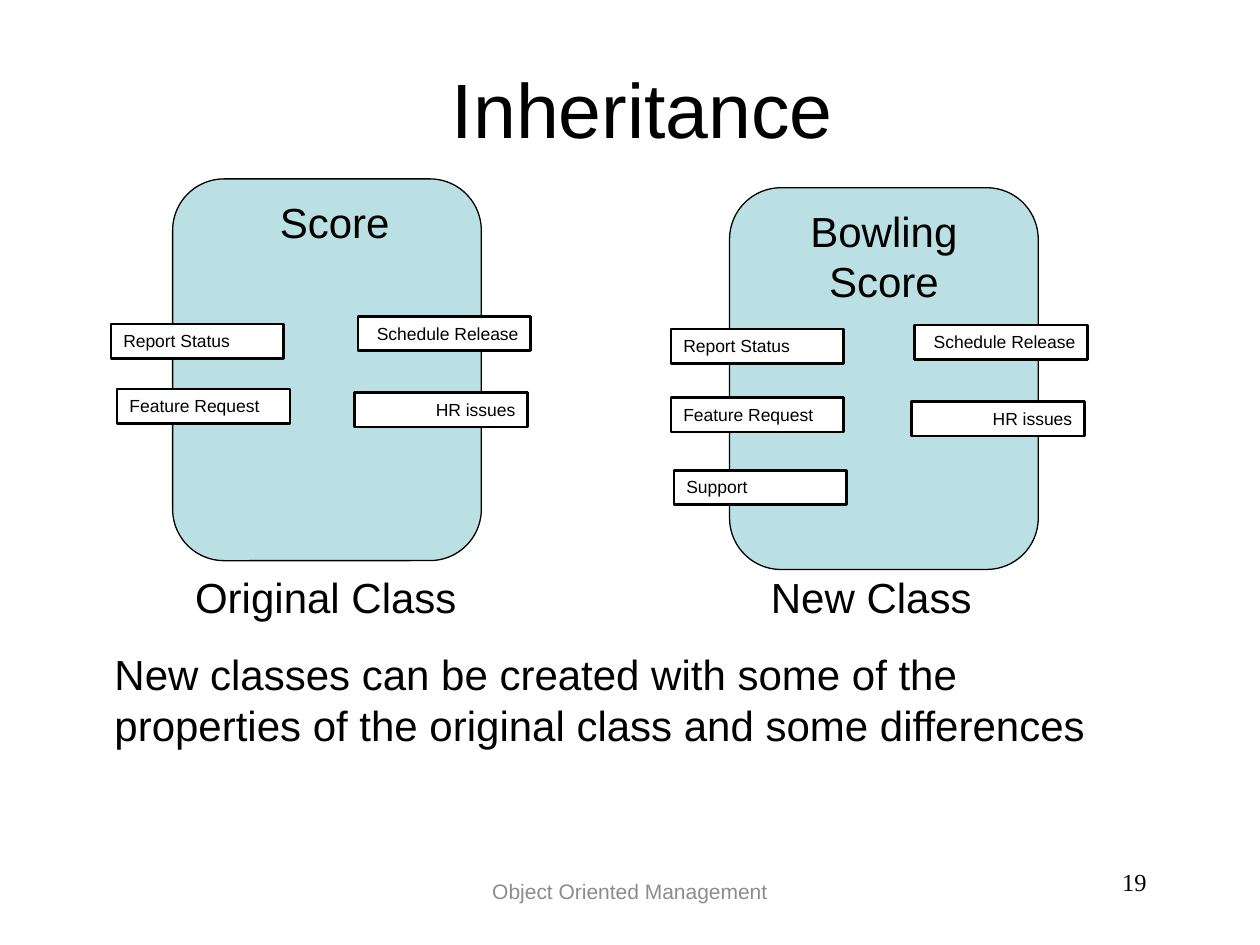
from dataclasses import dataclass

from lxml.etree import SubElement
from pptx import Presentation
from pptx.dml.color import RGBColor
from pptx.enum.shapes import MSO_SHAPE
from pptx.enum.text import MSO_ANCHOR, PP_ALIGN
from pptx.oxml.ns import qn
from pptx.util import Inches, Pt

CELL = Inches(0.1)
COLUMNS, ROWS = 100, 75


@dataclass(frozen=True)
class Theme:
    """Colours, fonts and type sizes of the deck."""

    ink: str = "000000"
    muted: str = "8C8C8C"
    panel: str = "BBE0E3"
    paper: str = "FFFFFF"
    sans: str = "Arial"
    serif: str = "Times New Roman"
    title: int = 44
    body: int = 24
    label: int = 10
    footer: int = 12
    number: int = 14


@dataclass(frozen=True)
class Box:
    """A rectangle in grid columns and rows."""

    left: float
    top: float
    width: float
    height: float

    def share(self, left, top, width, height):
        """Return the box lying at the given shares of this one."""
        return Box(self.left + left * self.width, self.top + top * self.height,
                   width * self.width, height * self.height)

    def place(self):
        """Return left, top, width and height as slide lengths."""
        return [round(side * CELL) for side in
                (self.left, self.top, self.width, self.height)]


THEME = Theme()
LABEL_SIZE = (0.56, 0.09)
RIGHT_LABELS = [("Schedule Release", 0.60, 0.36), ("HR issues", 0.59, 0.56)]


def write(shape, lines, size, align=PP_ALIGN.LEFT, color=THEME.ink,
          font=THEME.sans, anchor=MSO_ANCHOR.TOP, gap=0, tabs=()):
    """Fill a shape with evenly styled paragraphs."""
    frame = shape.text_frame
    frame.word_wrap = True
    frame.vertical_anchor = anchor
    for index, line in enumerate(lines):
        para = frame.add_paragraph() if index else frame.paragraphs[0]
        para.text = line
        para.alignment = align
        if "\t" in line:
            stops = SubElement(para._p.get_or_add_pPr(), qn("a:tabLst"))
            for stop in tabs:
                SubElement(stops, qn("a:tab"), pos=str(round(stop * CELL)), algn="l")
        if index and gap:
            para.space_before = Pt(gap)
        para.font.size = Pt(size)
        para.font.name = font
        para.font.color.rgb = RGBColor.from_string(color)


def add_text(page, box, lines, size, **style):
    """Add a text box."""
    write(page.shapes.add_textbox(*box.place()), lines, size, **style)


def add_block(page, box, kind, fill, weight):
    """Add an outlined flat shape."""
    shape = page.shapes.add_shape(kind, *box.place())
    shape.shadow.inherit = False
    shape.fill.solid()
    shape.fill.fore_color.rgb = RGBColor.from_string(fill)
    shape.line.color.rgb = RGBColor.from_string(THEME.ink)
    shape.line.width = Pt(weight)
    return shape


def add_class(page, box, name, name_box, left_labels):
    """Draw a class panel with its name and the methods on both edges."""
    add_block(page, box, MSO_SHAPE.ROUNDED_RECTANGLE, THEME.panel, 0.75)
    add_text(page, box.share(*name_box), name, THEME.body, align=PP_ALIGN.CENTER)
    for labels, align in ((left_labels, PP_ALIGN.LEFT), (RIGHT_LABELS, PP_ALIGN.RIGHT)):
        for text, left, top in labels:
            label = add_block(page, box.share(left, top, *LABEL_SIZE),
                              MSO_SHAPE.RECTANGLE, THEME.paper, 1.5)
            write(label, [text], THEME.label, align=align)


def add_title(page, box):
    """Write the slide title."""
    add_text(page, box, ["Inheritance"], THEME.title,
             align=PP_ALIGN.CENTER, anchor=MSO_ANCHOR.MIDDLE)


def add_explanation(page, box):
    """Write the panel captions and the sentence below them."""
    add_text(page, box, [
        "\tOriginal Class\tNew Class",
        "New classes can be created with some of the properties of the "
        "original class and some differences",
    ], THEME.body, gap=15, tabs=(6.4, 52.1))


def add_footer(page, box):
    """Write the footer text and the slide number."""
    add_text(page, box.share(0.3, 0, 0.4, 1), ["Object Oriented Management"],
             THEME.footer, align=PP_ALIGN.CENTER, color=THEME.muted,
             anchor=MSO_ANCHOR.MIDDLE)
    add_text(page, box.share(0.72, 0, 0.2, 1), ["19"], THEME.number,
             align=PP_ALIGN.RIGHT, font=THEME.serif)


def main():
    """Build and save the deck."""
    deck = Presentation()
    deck.slide_width, deck.slide_height = COLUMNS * CELL, ROWS * CELL
    page = deck.slides.add_slide(deck.slide_layouts[6])
    add_title(page, Box(8.5, 4.4, 85, 8.3))
    add_class(page, Box(13.7, 14.2, 24.5, 30.3), ["Score"], (0.06, 0.03, 0.93, 0.17),
              [("Report Status", -0.20, 0.38), ("Feature Request", -0.18, 0.55)])
    add_explanation(page, Box(8.1, 44.9, 81.9, 15.1))
    add_class(page, Box(57.9, 14.9, 24.5, 30.3), ["Bowling", "Score"],
              (0.01, 0.03, 0.98, 0.3),
              [("Report Status", -0.19, 0.37), ("Feature Request", -0.19, 0.55),
               ("Support", -0.18, 0.74)])
    add_footer(page, Box(0, 68.3, COLUMNS, 4.9))
    deck.save("out.pptx")


if __name__ == "__main__":
    main()
